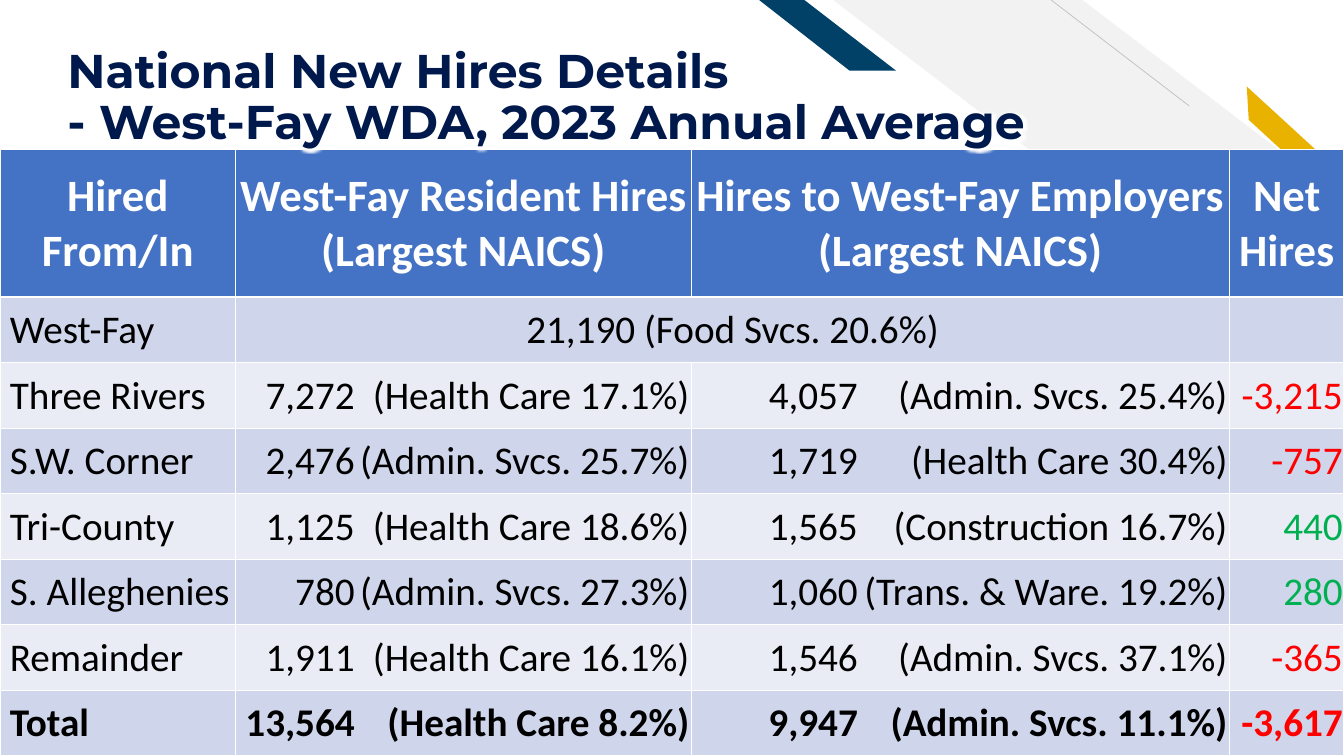
from lxml import etree
from pptx import Presentation
from pptx.dml.color import RGBColor
from pptx.enum.shapes import MSO_CONNECTOR, MSO_SHAPE
from pptx.enum.text import MSO_ANCHOR, PP_ALIGN
from pptx.oxml.ns import qn
from pptx.util import Cm, Pt

LEFT, CENTER, RIGHT = PP_ALIGN.LEFT, PP_ALIGN.CENTER, PP_ALIGN.RIGHT
MIDDLE, BOTTOM = MSO_ANCHOR.MIDDLE, MSO_ANCHOR.BOTTOM
STRIPE, STRAIGHT = MSO_SHAPE.DIAGONAL_STRIPE, MSO_CONNECTOR.STRAIGHT


def rgb(color):
    return RGBColor.from_string(color)


def add(parent, tag, **attrs):
    """Append a DrawingML child element and return it."""
    return etree.SubElement(parent, qn("a:" + tag), attrs)


deck = Presentation()
deck.slide_width, deck.slide_height = Cm(33.87), Cm(19.05)
slide = deck.slides.add_slide(deck.slide_layouts[6])
shapes = slide.shapes

# Corner decoration
band = shapes.add_shape(STRIPE, Cm(21), 0, Cm(12.87), Cm(9.83))
band.adjustments[0] = 0.512
band._element.spPr.xfrm.set("flipH", "1")
hair = shapes.add_connector(STRAIGHT, Cm(29.97), Cm(2.67), Cm(26.49), 0)
hair.line.color.rgb = rgb("BFBFBF")
hair.line.width = Pt(0.5)
add(hair._element.spPr, "effectLst")

gold = [(33.87, 5.23), (33.83, 4.39), (31.42, 2.18), (31.47, 3.02)]
navy = [(22.58, 1.78), (20.27, 0), (19.13, 0), (21.41, 1.78)]
filled = [(band, "F2F2F2")]
for points, color in ((gold, "EAB200"), (navy, "014067")):
    start, *rest = [(Cm(x), Cm(y)) for x, y in points]
    outline = shapes.build_freeform(*start)
    outline.add_line_segments(rest)
    filled.append((outline.convert_to_shape(), color))
for shape, color in filled:
    shape.shadow.inherit = False
    shape.fill.solid()
    shape.fill.fore_color.rgb = rgb(color)
    shape.line.fill.background()

# Hires table: (number, largest sector) pairs sit on tab stops
header = ["Hired From/In", "West-Fay Resident Hires\n(Largest NAICS)",
          "Hires to West-Fay Employers\n(Largest NAICS)", "Net Hires"]
rows = [
    header,
    ["West-Fay", "21,190 (Food Svcs. 20.6%)", "", ""],
    ["Three Rivers", ("7,272", "(Health Care 17.1%)"),
     ("4,057", "(Admin. Svcs. 25.4%)"), "-3,215"],
    ["S.W. Corner", ("2,476", "(Admin. Svcs. 25.7%)"),
     ("1,719", "(Health Care 30.4%)"), "-757"],
    ["Tri-County", ("1,125", "(Health Care 18.6%)"),
     ("1,565", "(Construction 16.7%)"), "440"],
    ["S. Alleghenies", ("780", "(Admin. Svcs. 27.3%)"),
     ("1,060", "(Trans. & Ware. 19.2%)"), "280"],
    ["Remainder", ("1,911", "(Health Care 16.1%)"),
     ("1,546", "(Admin. Svcs. 37.1%)"), "-365"],
    ["Total", ("13,564", "(Health Care 8.2%)"),
     ("9,947", "(Admin. Svcs. 11.1%)"), "-3,617"],
]
widths = [5.94, 11.48, 13.56, 2.89]
stops = {1: (2.97, 11.4), 2: (4.17, 13.48)}
last = len(rows) - 1

frame = shapes.add_table(len(rows), len(widths), 0, Cm(3.76), Cm(33.87), Cm(15.28))
table = frame.table
table.first_row = table.horz_banding = False
for column, width in zip(table.columns, widths):
    column.width = Cm(width)
for r, row in enumerate(rows):
    table.rows[r].height = Cm(1.65 if r else 3.73)
    for c, value in enumerate(row):
        cell = table.cell(r, c)
        cell.vertical_anchor = MIDDLE
        cell.margin_left = Cm(0.25 if r and c == 0 else 0.03)
        cell.margin_right = cell.margin_top = Cm(0.03)
        cell.margin_bottom = 0

        for side in "LRTB":
            thick = (r, side) in ((0, "B"), (1, "T"))
            edge = add(cell._tc.get_or_add_tcPr(), "ln" + side,
                       w=str(Pt(1.5 if thick else 1)))
            add(add(edge, "solidFill"), "srgbClr", val="FFFFFF")
        cell.fill.solid()
        shade = "CFD5EA" if r % 2 else "E9EBF5"
        if r in (0, last):
            shade = "CFD5EA" if r else "4472C4"
        cell.fill.fore_color.rgb = rgb(shade)

        pair = isinstance(value, tuple)
        cell.text = "\t" + "\t".join(value) if pair else value
        color = "000000" if r else "FFFFFF"
        if r and c == 3:
            color = "FF0000" if value.startswith("-") else "00B050"
        for para in cell.text_frame.paragraphs:
            if r == 0 or (r == 1 and c):
                para.alignment = CENTER
            else:
                para.alignment = RIGHT if c == 3 else LEFT
            if pair:
                tabs = add(para._p.get_or_add_pPr(), "tabLst")
                for stop in stops[c]:
                    add(tabs, "tab", pos=str(Cm(stop)), algn="r")
            font = para.font
            font.name, font.size = "Calibri", Pt(28 if r else 32)
            font.bold = r in (0, last)
            font.color.rgb = rgb(color)
table.cell(1, 1).merge(table.cell(1, 2))

# Title with a white glow
title = shapes.add_textbox(Cm(1.45), Cm(0.58), Cm(32), Cm(3.2)).text_frame
title.word_wrap = True
title.vertical_anchor = BOTTOM
title.margin_left = title.margin_right = Cm(0.25)
title.margin_top, title.margin_bottom = Cm(0.13), 0
para = title.paragraphs[0]
para.line_spacing = 0.9
para.font.name, para.font.size = "Montserrat", Pt(33.8)
para.font.bold = True
para.font.color.rgb = rgb("00194C")
para.add_run().text = "National New Hires Details"
para.add_line_break()
para.add_run().text = "- West-Fay WDA, 2023 Annual Average"
for run in para.runs:
    effects = add(run._r.get_or_add_rPr(), "effectLst")
    glow = add(effects, "glow", rad=str(Pt(8)))
    add(glow, "srgbClr", val="FFFFFF")

deck.save("out.pptx")
